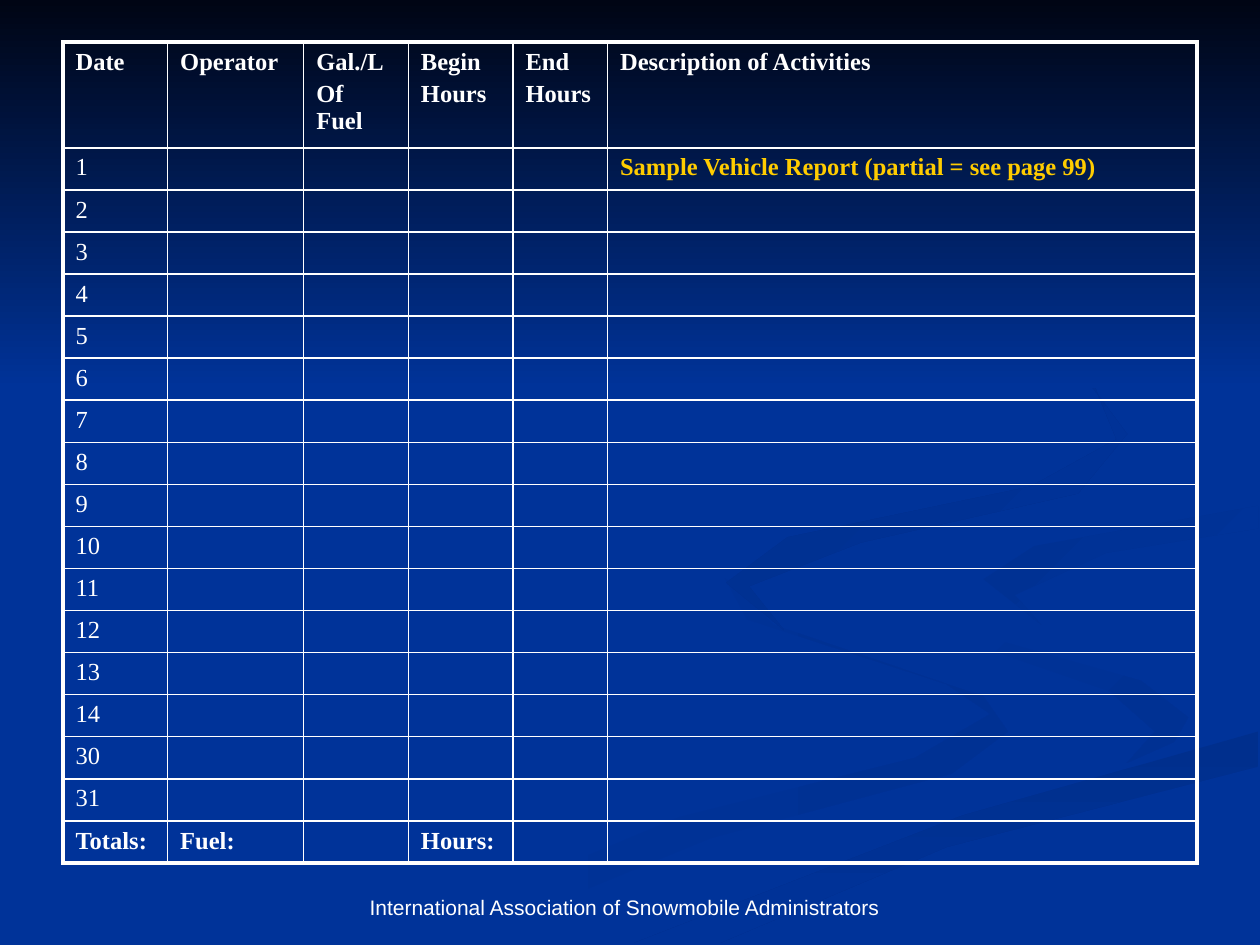
import pptx
import pptx.dml.color
import pptx.enum.text
import pptx.oxml.ns
import pptx.util
from lxml import etree

Pt = pptx.util.Pt

COLORS = {
    "night": "000514",
    "blue": "003399",
    "shade": "003193",
    "deep": "002F8D",
    "white": "FFFFFF",
    "gold": "FFCC00",
}

WIDTH, HEIGHT = 720, 540

# Background ribbons: start colour, end colour, clockwise angle, outline in points
RIBBONS = [
    ("blue", "shade", 0, [
        (562, 398), (442, 357), (414, 330), (427, 354), (541, 391), (566, 408),
        (523, 433), (388, 467), (216, 539), (260, 539), (406, 479), (544, 442),
        (576, 418)]),
    ("blue", "shade", 45, [
        (679, 410), (652, 389), (546, 359), (521, 334), (544, 364), (634, 395),
        (660, 418), (644, 436), (671, 424)]),
    ("deep", "blue", 90, [
        (362, 539), (411, 539), (541, 484), (719, 438), (719, 418), (550, 466)]),
    ("shade", "blue", 45, [
        (562, 331), (595, 357), (580, 340), (632, 316), (719, 302), (719, 289),
        (591, 312)]),
    ("deep", "blue", 45, [
        (492, 310), (616, 282), (644, 248), (607, 198), (549, 168), (621, 210),
        (638, 251), (589, 278), (450, 307), (415, 333), (448, 360), (428, 335)]),
    # Dark sky across the top
    ("night", "blue", 90, [(0, 0), (0, 222), (WIDTH, 222), (WIDTH, 0)]),
]

COLUMN_WIDTHS = [59.8, 77.8, 59.8, 59.8, 54, 336.8]
HEADINGS = ["Date", "Operator", "Gal./L\nOf Fuel", "Begin\nHours", "End\nHours",
            "Description of Activities"]
SAMPLE = "Sample Vehicle Report (partial = see page 99)"
TOTALS = ["Totals:", "Fuel:", "", "Hours:", "", ""]
DAYS = [*range(1, 15), 30, 31]
HEADER_HEIGHT, ROW_HEIGHT = 56.5, 22.7
INNER, OUTER = 1, 2.25


def rgb(color):
    return pptx.dml.color.RGBColor.from_string(COLORS[color])


def style_run(run, font, size, color, bold=False):
    run.font.name = font
    run.font.size = Pt(size)
    run.font.bold = bold
    run.font.color.rgb = rgb(color)


def add_ribbon(slide, start, end, angle, outline):
    corners = [(Pt(x), Pt(y)) for x, y in outline]
    builder = slide.shapes.build_freeform(*corners[0], scale=1.0)
    builder.add_line_segments(corners[1:], close=True)
    ribbon = builder.convert_to_shape()
    ribbon.shadow.inherit = False
    ribbon.line.fill.background()
    ribbon.fill.gradient()
    # gradient_angle counts counter-clockwise
    ribbon.fill.gradient_angle = -angle % 360
    for stop, color in zip(ribbon.fill.gradient_stops, (start, end)):
        stop.color.rgb = rgb(color)


def add_footer(slide, text):
    footer = slide.shapes.add_textbox(Pt(180), Pt(492), Pt(354), Pt(37.2))
    frame = footer.text_frame
    frame.word_wrap = True
    frame.vertical_anchor = pptx.enum.text.MSO_ANCHOR.BOTTOM
    frame.text = text
    frame.paragraphs[0].alignment = pptx.enum.text.PP_ALIGN.CENTER
    style_run(frame.paragraphs[0].runs[0], "Arial", 12, "white")


def set_borders(cell, widths):
    properties = cell._tc.get_or_add_tcPr()
    for position, (side, width) in enumerate(widths.items()):
        border = etree.Element(pptx.oxml.ns.qn(f"a:{side}"), w=str(Pt(width)))
        fill = etree.SubElement(border, pptx.oxml.ns.qn("a:solidFill"))
        etree.SubElement(fill, pptx.oxml.ns.qn("a:srgbClr"), val=COLORS["white"])
        properties.insert(position, border)


def fill_cell(cell, text, color, bold):
    cell.fill.background()
    cell.text_frame.text = text
    for paragraph in cell.text_frame.paragraphs:
        paragraph.space_before = Pt(2.8)
        for run in paragraph.runs:
            style_run(run, "Times New Roman", 14, color, bold)
        if not text:
            # Keeps an empty cell from stretching its row
            paragraph._p.get_or_add_endParaRPr().set("sz", "1200")


def add_report(slide):
    days = [[str(day)] + [""] * 5 for day in DAYS]
    days[0][-1] = SAMPLE
    rows = [HEADINGS, *days, TOTALS]
    last_row, last_column = len(rows) - 1, len(COLUMN_WIDTHS) - 1
    height = HEADER_HEIGHT + ROW_HEIGHT * last_row
    report = slide.shapes.add_table(len(rows), len(COLUMN_WIDTHS), Pt(36), Pt(24),
                                    Pt(sum(COLUMN_WIDTHS)), Pt(height)).table
    report.first_row = report.horz_banding = False
    for column, width in zip(report.columns, COLUMN_WIDTHS):
        column.width = Pt(width)
    for r, texts in enumerate(rows):
        report.rows[r].height = Pt(ROW_HEIGHT if r else HEADER_HEIGHT)
        for c, text in enumerate(texts):
            cell = report.cell(r, c)
            sample = text == SAMPLE
            fill_cell(cell, text, "gold" if sample else "white",
                      sample or r in (0, last_row))
            set_borders(cell, {
                "lnL": OUTER if c == 0 else INNER,
                "lnR": OUTER if c == last_column else INNER,
                "lnT": OUTER if r == 0 else INNER,
                "lnB": OUTER if r == last_row else INNER,
            })


def main():
    deck = pptx.Presentation()
    deck.slide_width, deck.slide_height = Pt(WIDTH), Pt(HEIGHT)
    slide = deck.slides.add_slide(deck.slide_layouts[6])

    # Background
    slide.background.fill.solid()
    slide.background.fill.fore_color.rgb = rgb("blue")
    for ribbon in RIBBONS:
        add_ribbon(slide, *ribbon)

    # Content
    add_footer(slide, "International Association of Snowmobile Administrators")
    add_report(slide)
    deck.save("out.pptx")


if __name__ == "__main__":
    main()
